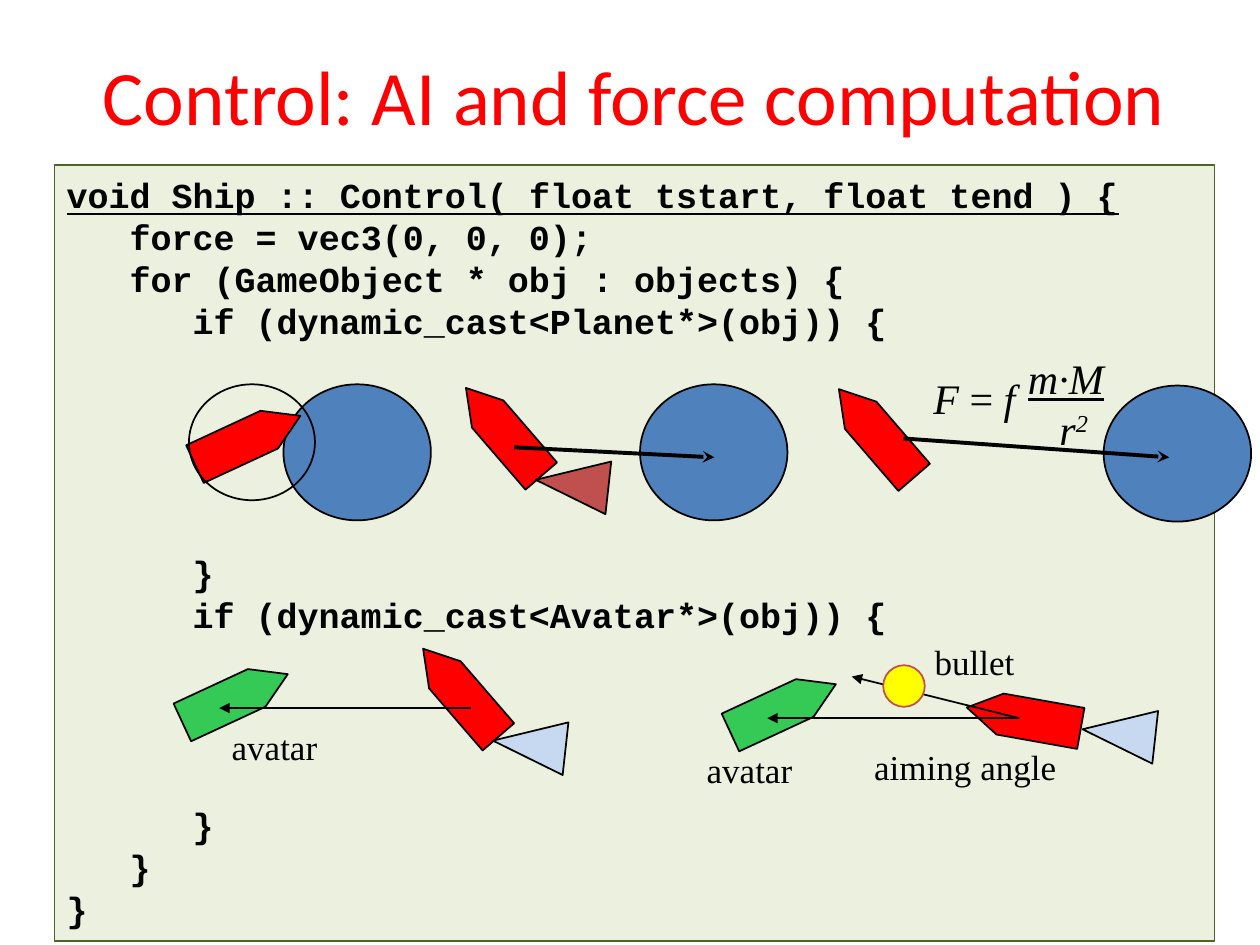
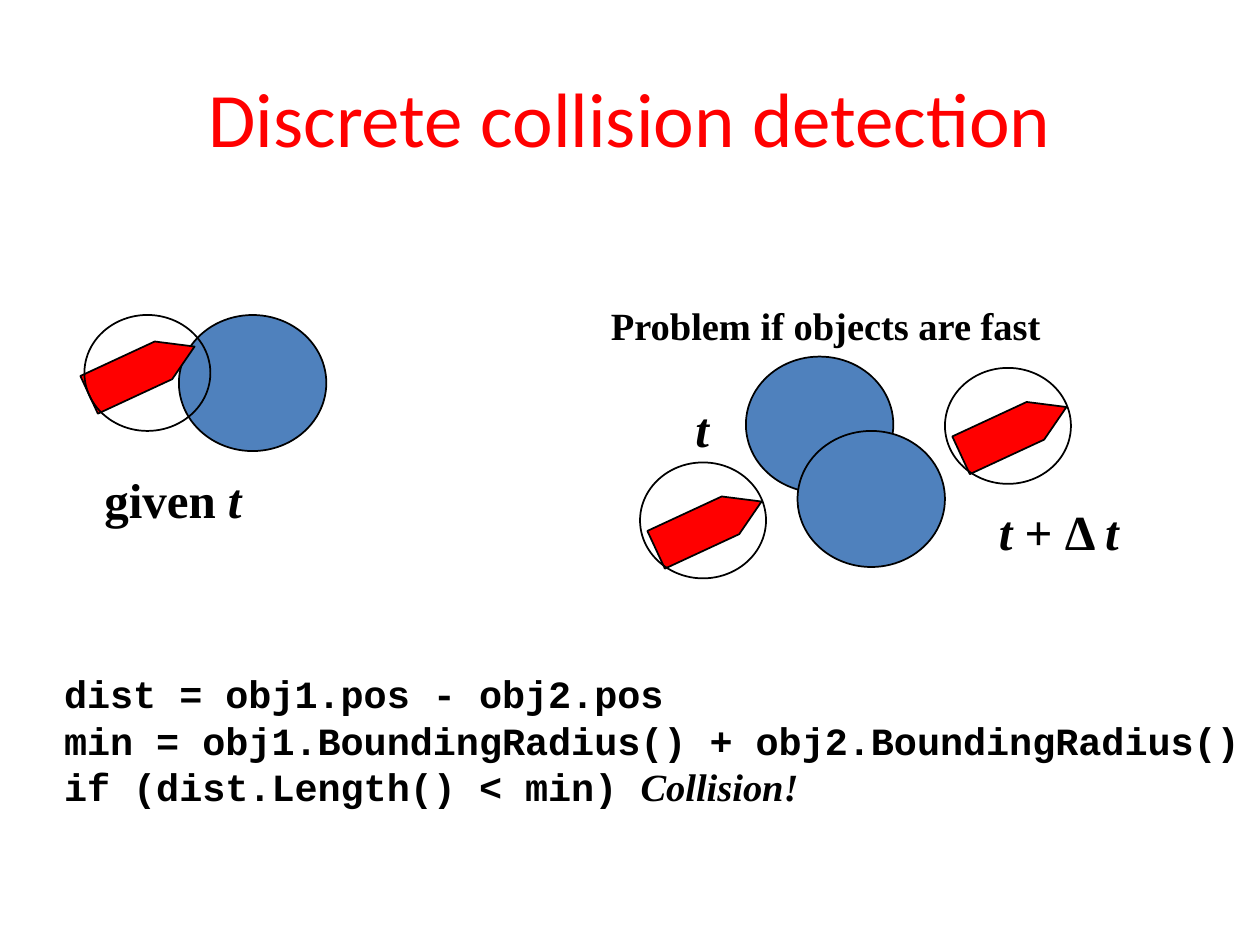
from pptx import Presentation
from pptx import util as u
from pptx.dml.color import RGBColor
from pptx.enum import shapes, text
from pptx.oxml.ns import qn
from lxml import etree

RED = RGBColor(0xFF, 0x00, 0x00)
BLACK = RGBColor(0x00, 0x00, 0x00)
BLUE = RGBColor(0x4F, 0x81, 0xBD)
RUST = RGBColor(0xC0, 0x50, 0x4D)
PALE = RGBColor(0xC6, 0xD9, 0xF1)
GREEN = RGBColor(0x35, 0xC9, 0x55)
YELLOW = RGBColor(0xFF, 0xFF, 0x00)
CREAM = RGBColor(0xEB, 0xF1, 0xDE)
OLIVE = RGBColor(0x4F, 0x62, 0x28)

MONO, SERIF = "Courier New", "Times New Roman"
PLANET, BOUND, BULLET = (1.17, 1.08), (1, 0.92), (0.33, 0.33)
SHIP = [(0.33, 0.92), (0, 0.92), (0, 0.27), (0.17, 0), (0.33, 0.27)]
FLAME = [(0, 0), (0.21, 0.58), (0.42, 0)]
EAST, NORTH, WEST, JET = 65.1, 319.2, 280.1, 96.3

# (indent level, blank lines above, words, run format)
CODE = [
    (0, 0, "void Ship :: Control( float tstart, float tend ) {",
     {"underline": True}),
    (1, 0, "force = vec3(0, 0, 0);", {}),
    (1, 0, "for (GameObject * obj : objects) {", {}),
    (2, 0, "if (dynamic_cast<Planet*>(obj)) {", {}),
    (2, 5, "}", {}),
    (2, 0, "if (dynamic_cast<Avatar*>(obj)) {", {}),
    (2, 4, "}", {}),
    (1, 0, "}", {}),
    (0, 0, "}", {}),
]

IT = {"italic": True}
BOLD = {"bold": True}
BI = {"bold": True, "italic": True}

# Parts from back to front: (kind, place, further values)
CONTROL = [
    ("oval", (2.25, 3.05), PLANET, BLUE),
    ("poly", (1.8, 3.03), SHIP, EAST, RED),
    ("oval", (1.5, 3.05), BOUND, None),
    ("oval", (5.08, 3.05), PLANET, BLUE),
    ("poly", (3.83, 2.97), SHIP, NORTH, RED),
    ("arrow", (4.08, 3.55), (5.67, 3.63), 2.25, "stealth"),
    ("poly", (4.33, 3.55), FLAME, JET, RUST),
    ("oval", (8.76, 3.06), PLANET, BLUE),
    ("poly", (6.79, 2.98), SHIP, NORTH, RED),
    ("arrow", (7.17, 3.48), (9.28, 3.63), 2.25, "stealth"),
    ("label", (7.31, 2.89), (0.94, 0.5), 24,
     [(0, [("F", IT), (" = ", {}), ("f", IT)])]),
    ("label", (8.06, 2.73), (0.81, 0.91), 24,
     [(0, [("m·M", {"italic": True, "underline": True})]),
      (0.25, [("r", IT), ("2", {"italic": True, "raise": True})])]),
    ("poly", (3.49, 5.04), SHIP, NORTH, RED),
    ("poly", (3.99, 5.62), FLAME, JET, PALE),
    ("poly", (1.7, 5.08), SHIP, EAST, GREEN),
    ("label", (1.74, 5.69), (0.89, 0.44), 20, [(0, [("avatar", {})])]),
    ("arrow", (3.74, 5.62), (1.74, 5.62), 1, "triangle"),
    ("poly", (7.96, 5.24), SHIP, WEST, RED),
    ("poly", (8.67, 5.53), FLAME, JET, PALE),
    ("poly", (6.05, 5.16), SHIP, EAST, GREEN),
    ("label", (5.51, 5.87), (0.89, 0.44), 20, [(0, [("avatar", {})])]),
    ("arrow", (8.09, 5.7), (6.09, 5.7), 1, "triangle"),
    ("arrow", (8.09, 5.7), (6.76, 5.37), 1, "triangle"),
    ("oval", (7.01, 5.28), BULLET, YELLOW, RUST),
    ("label", (7.32, 5.01), (0.84, 0.44), 20, [(0, [("bullet", {})])]),
    ("label", (6.84, 5.85), (1.66, 0.44), 20, [(0, [("aiming angle", {})])]),
]

MF = {"bold": True, "name": MONO}
DETECT = [
    ("oval", (1.42, 2.5), PLANET, BLUE),
    ("poly", (0.96, 2.48), SHIP, EAST, RED),
    ("oval", (0.67, 2.5), BOUND, None),
    ("label", (0.41, 5.25), (9.68, 1.21), 22,
     [(0, [("dist = obj1.pos - obj2.pos", MF)]),
      (0, [("min = obj1.BoundingRadius() + obj2.BoundingRadius()", MF)]),
      (0, [("if (dist.Length() < min) ", MF), ("Collision!", BI)])]),
    ("label", (0.73, 3.66), (1.3, 0.57), 28,
     [(0, [("given ", BOLD), ("t", BI)])]),
    ("label", (4.75, 2.33), (3.65, 0.47), 22,
     [(0, [("Problem if objects are fast", BOLD)])]),
    ("oval", (5.92, 2.83), PLANET, BLUE),
    ("poly", (5.46, 3.71), SHIP, EAST, RED),
    ("oval", (5.08, 3.67), BOUND, None),
    ("label", (5.42, 3.09), (0.31, 0.57), 28, [(0, [("t", BI)])]),
    ("poly", (7.88, 2.96), SHIP, EAST, RED),
    ("oval", (7.5, 2.92), BOUND, None),
    ("label", (7.83, 3.91), (1.17, 0.57), 28,
     [(0, [("t", BI), (" + Δ ", BOLD), ("t", BI)])]),
    ("oval", (6.33, 3.42), PLANET, BLUE),
]


def inches(*vals):
    return [u.Inches(v) for v in vals]


def paint(shape, fill, line=BLACK, width=1):
    shape.shadow.inherit = False
    if fill is None:
        shape.fill.background()
    else:
        shape.fill.solid()
        shape.fill.fore_color.rgb = fill
    shape.line.color.rgb = line
    shape.line.width = u.Pt(width)


def add_run(para, words, size, form):
    run = para.add_run()
    run.text = words
    run.font.color.rgb = BLACK
    for key, val in {"name": SERIF, "size": u.Pt(size), **form}.items():
        if key == "raise":
            run.font._element.set("baseline", "30000")
        else:
            setattr(run.font, key, val)


def add_para(frame, first, indent, size):
    """Start a left-aligned line, 1.2 times its type size high."""
    para = frame.paragraphs[0] if first else frame.add_paragraph()
    para.alignment = text.PP_ALIGN.LEFT
    para.line_spacing = u.Pt(round(size * 1.2, 1))
    props = para._p.get_or_add_pPr()
    props.set("marL", str(u.Inches(indent)))
    props.set("indent", "0")
    return para


def oval(slide, pos, size, fill, line=BLACK):
    shape = slide.shapes.add_shape(shapes.MSO_SHAPE.OVAL, *inches(*pos, *size))
    paint(shape, fill, line)


def poly(slide, pos, pts, turn, fill):
    """Draw an upright outline at pos, then turn it about its centre."""
    spots = [inches(pos[0] + x, pos[1] + y) for x, y in pts]
    pen = slide.shapes.build_freeform(*spots[0])
    pen.add_line_segments(spots[1:], close=True)
    shape = pen.convert_to_shape()
    shape.rotation = turn
    paint(shape, fill)


def arrow(slide, start, end, width, head):
    line = slide.shapes.add_connector(
        shapes.MSO_CONNECTOR.STRAIGHT, *inches(*start, *end))
    line.line.color.rgb = BLACK
    line.line.width = u.Pt(width)
    etree.SubElement(line.line._get_or_add_ln(), qn("a:tailEnd"), type=head)
    etree.SubElement(line._element.spPr, qn("a:effectLst"))


def label(slide, pos, size, pts, paras):
    frame = slide.shapes.add_textbox(*inches(*pos, *size)).text_frame
    frame.word_wrap = False
    frame.margin_top = u.Inches(0.07)
    for i, (indent, runs) in enumerate(paras):
        para = add_para(frame, i == 0, indent, pts)
        for words, form in runs:
            add_run(para, words, pts, form)


def code_box(slide):
    box = slide.shapes.add_shape(
        shapes.MSO_SHAPE.RECTANGLE, *inches(0.43, 1.31, 9.21, 6.16))
    paint(box, CREAM, OLIVE, 0.75)
    frame = box.text_frame
    frame.word_wrap = True
    frame.vertical_anchor = text.MSO_ANCHOR.TOP
    frame.margin_top = u.Inches(0.07)
    for i, (level, gap, words, form) in enumerate(CODE):
        para = add_para(frame, i == 0, level / 2, 20)
        para.space_before = u.Pt(gap * 24)
        add_run(para, words, 20, {**MF, **form})


def new_slide(deck, name, place):
    slide = deck.slides.add_slide(deck.slide_layouts[5])
    title = slide.shapes.title
    title.left, title.top, title.width, title.height = inches(*place)
    title.text_frame.text = name
    title.text_frame.vertical_anchor = text.MSO_ANCHOR.MIDDLE
    para = title.text_frame.paragraphs[0]
    para.alignment = text.PP_ALIGN.CENTER
    font = para.runs[0].font
    font.color.rgb = RED
    for key, val in {"name": "Calibri", "size": u.Pt(44)}.items():
        setattr(font, key, val)
    return slide


DRAW = {"oval": oval, "poly": poly, "arrow": arrow, "label": label}


def draw(slide, parts):
    for kind, *vals in parts:
        DRAW[kind](slide, *vals)


def main():
    deck = Presentation()
    deck.slide_width, deck.slide_height = inches(10, 7.5)
    slide = new_slide(deck, "Control: AI and force computation",
                      (0.43, 0.13, 9.21, 1.25))
    code_box(slide)
    draw(slide, CONTROL)
    slide = new_slide(deck, "Discrete collision detection",
                      (0.5, 0.3, 9, 1.25))
    draw(slide, DETECT)
    deck.save("out.pptx")


if __name__ == "__main__":
    main()
